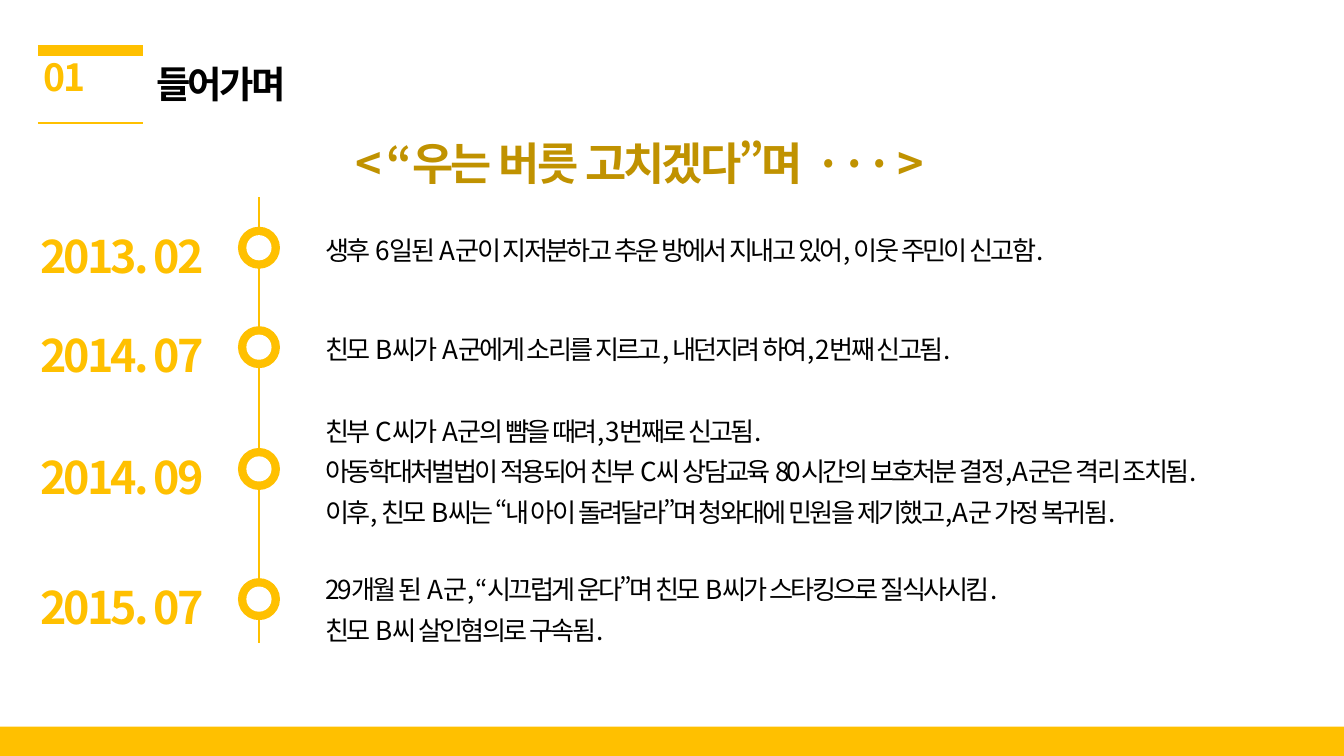
"""Build a timeline slide with dated events beside a vertical line of rings."""
from lxml import etree
from pptx import Presentation
from pptx import util as u
from pptx.dml.color import RGBColor
from pptx.enum import lang, shapes, text
from pptx.oxml import ns

PX = 9525
FONT = "Noto Sans CJK KR"
AMBER = RGBColor(0xFF, 0xC0, 0x00)
DARK_AMBER = RGBColor(0xC0, 0x92, 0x00)
BLACK = RGBColor(0, 0, 0)
WHITE = RGBColor(0xFF, 0xFF, 0xFF)
RING_X, RING, HOLE = 170, 30, 18

EVENTS = [
    (162, 156, 605, "2013. 02", [
        "생후 6일된 A군이 지저분하고 추운 방에서 지내고 있어, 이웃 주민이 신고함.",
    ]),
    (233, 227, 726, "2014. 07", [
        "친모 B씨가 A군에게 소리를 지르고, 내던지려 하여, 2번째 신고됨.",
    ]),
    (320, 285, 726, "2014. 09", [
        "친부 C씨가 A군의 뺨을 때려, 3번째로 신고됨.",
        "아동학대처벌법이 적용되어 친부 C씨 상담교육 80시간의 보호처분 결정, A군은 격리 조치됨.",
        "이후, 친모 B씨는 “내 아이 돌려달라”며 청와대에 민원을 제기했고, A군 가정 복귀됨.",
    ]),
    (413, 398, 726, "2015. 07", [
        "29개월 된 A군, “시끄럽게 운다”며 친모 B씨가 스타킹으로 질식사시킴.",
        "친모 B씨 살인혐의로 구속됨.",
    ]),
]


def px(*lengths):
    """Turn whole px into EMU."""
    return [u.Emu(length * PX) for length in lengths]


def add_span(para, words, size, color, bold, spacing):
    """Add one run with its font and letter spacing in points."""
    span = para.add_run()
    span.text = words
    font = span.font
    font.size, font.bold, font.name = u.Pt(size), bold, FONT
    font.color.rgb = color
    font.language_id = lang.MSO_LANGUAGE_ID.KOREAN
    properties = span._r.get_or_add_rPr()
    properties.set("spc", str(int(spacing * 100)))
    etree.SubElement(properties, ns.qn("a:ea"), typeface=FONT)


def write(box, lines, size=14, color=BLACK, bold=False, center=False, leading=1.3):
    """Fill a box; each line is a string or a list of (words, spacing) pairs."""
    frame = box.text_frame
    frame.word_wrap = True
    frame.auto_size = text.MSO_AUTO_SIZE.NONE
    frame.vertical_anchor = text.MSO_ANCHOR.TOP
    for index, line in enumerate(lines):
        para = frame.add_paragraph() if index else frame.paragraphs[0]
        para.alignment = text.PP_ALIGN.CENTER if center else text.PP_ALIGN.LEFT
        para.line_spacing = leading
        pairs = [(line, -1.5)] if isinstance(line, str) else line
        for words, spacing in pairs:
            add_span(para, words, size, color, bold, spacing)


def add_text(page, area, lines, **style):
    """Add a text box with formatted lines."""
    write(page.shapes.add_textbox(*px(*area)), lines, **style)


def add_title(page, area, words, **style):
    """Move and fill the title placeholder."""
    title = page.shapes.title
    title.left, title.top, title.width, title.height = px(*area)
    write(title, [words], **style)


def add_shape(page, kind, area, color):
    """Add a filled shape with neither outline nor shadow."""
    shape = page.shapes.add_shape(kind, *px(*area))
    shape.shadow.inherit = False
    shape.fill.solid()
    shape.fill.fore_color.rgb = color
    shape.line.fill.background()


def add_line(page, ends, width):
    """Add a straight amber line without a shadow."""
    line = page.shapes.add_connector(shapes.MSO_CONNECTOR.STRAIGHT, *px(*ends))
    line.line.color.rgb = AMBER
    line.line.width = u.Pt(width)
    etree.SubElement(line._element.spPr, ns.qn("a:effectLst"))


def add_ring(page, top):
    """Add a ring made of two concentric circles."""
    inset = (RING - HOLE) // 2
    oval = shapes.MSO_SHAPE.OVAL
    add_shape(page, oval, (RING_X, top, RING, RING), AMBER)
    add_shape(page, oval, (RING_X + inset, top + inset, HOLE, HOLE), WHITE)


def main():
    """Build and save the deck."""
    deck = Presentation()
    deck.slide_width, deck.slide_height = px(960, 540)
    page = deck.slides.add_slide(deck.slide_layouts[5])

    add_line(page, (27, 36, 102, 36), 6)
    add_line(page, (27, 88, 102, 88), 1)
    add_shape(page, shapes.MSO_SHAPE.RECTANGLE, (0, 519, 960, 21), AMBER)
    add_text(page, (4, 34, 84, 42), ["01"], size=20, color=AMBER, bold=True,
             center=True, leading=1.0)
    add_title(page, (102, 39, 688, 42), "들어가며", size=20, bold=True, leading=1.0)
    heading = [("< “우는 버릇 고치겠다”며", -1.5), (" · · · ", -3), (">", -1.5)]
    add_text(page, (170, 81, 574, 60), [heading], size=24, color=DARK_AMBER,
             bold=True, center=True)

    add_line(page, (185, 141, 185, 459), 0.75)
    for ring_top, text_top, width, date, lines in EVENTS:
        add_text(page, (12, ring_top - 15, 150, 55), [date], size=24, color=AMBER,
                 bold=True, center=True)
        add_ring(page, ring_top)
        add_text(page, (223, text_top, width, 10 + 29 * len(lines)), lines)

    deck.save("out.pptx")


if __name__ == "__main__":
    main()
